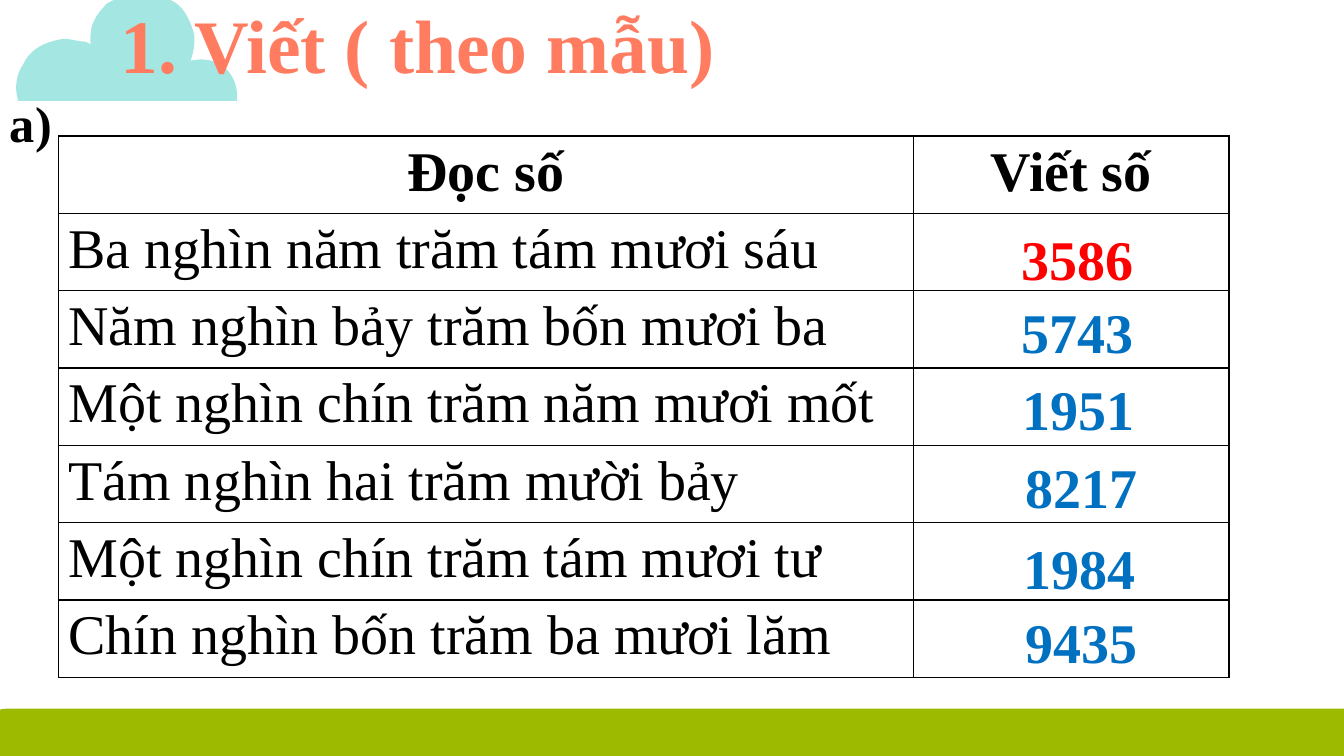
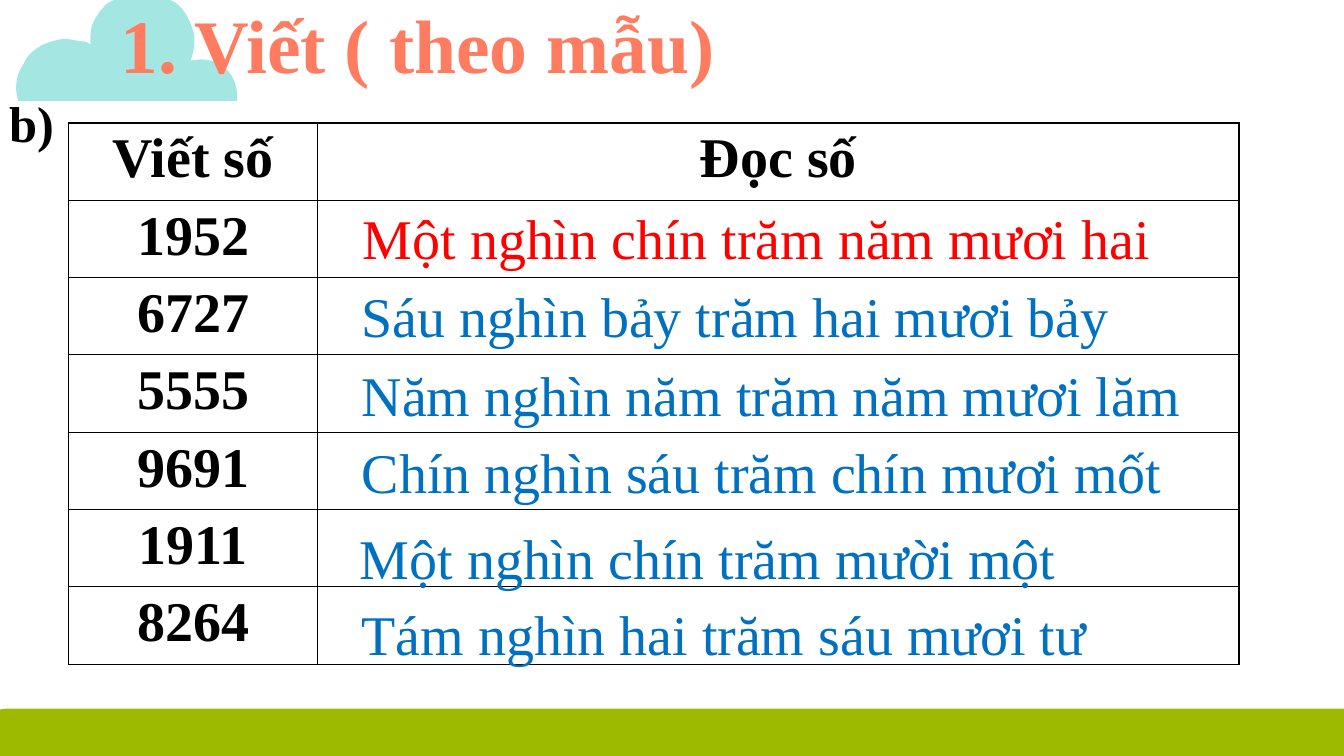
from dataclasses import dataclass

from lxml.etree import SubElement
from pptx import Presentation
from pptx.dml.color import RGBColor
from pptx.enum.shapes import MSO_SHAPE
from pptx.enum.text import MSO_ANCHOR, MSO_AUTO_SIZE, PP_ALIGN
from pptx.oxml.ns import qn
from pptx.util import Inches, Pt

FONT = "Times New Roman"
BLACK, RED, BLUE = "000000", "FF0000", "0070C0"
CORAL, AQUA, GREEN = "FF7C61", "A4E7E2", "9DB900"
BODY_SIZE = 40
TABLE_COLUMNS, TABLE_ROWS = 11.61, 5.37
ANSWER_ROWS = 0.77

CLOUD_GRID = (221, 111)
CLOUD_START = (2, 110)
CLOUD_CURVES = [
    ((1, 106), (0, 101), (0, 98)),
    ((0, 89), (2, 81), (7, 74)),
    ((12, 62), (24, 54), (36, 51)),
    ((49, 47), (51, 49), (64, 51)),
    ((68, 51), (71, 52), (74, 54)),
    ((73, 49), (74, 42), (75, 36)),
    ((78, 28), (82, 22), (87, 17)),
    ((89, 13), (93, 12), (97, 10)),
    ((104, 3), (114, 0), (124, 0)),
    ((134, 0), (144, 3), (153, 10)),
    ((165, 15), (171, 27), (175, 39)),
    ((178, 46), (177, 56), (175, 64)),
    ((175, 66), (173, 69), (173, 70)),
    ((176, 70), (180, 69), (183, 69)),
    ((209, 69), (221, 90), (219, 110)),
]


@dataclass
class Box:
    """A region measured in the one-inch columns and rows of the slide grid."""

    column: float
    row: float
    columns: float
    rows: float

    def lengths(self):
        """Return left, top, width and height."""
        return [Inches(value) for value in (self.column, self.row, self.columns, self.rows)]


@dataclass
class Answer:
    """An answer with its offset from the corner of its table cell."""

    text: str
    across: float
    down: float


CLOUD_BOX = Box(0.16, -0.1, 2.21, 1.11)
BAND_BOX = Box(-0.14, 7.03, 13.73, 0.49)
TITLE_BOX = Box(-1.94, -0.07, 12.35, 1.01)
LETTER_BOX = Box(0, 0.86, 0.68, 0.71)


def color(value):
    """Turn a hex string into a colour."""
    return RGBColor.from_string(value)


def paint(shape, fill):
    """Give a shape a flat fill without line or shadow."""
    shape.shadow.inherit = False
    shape.fill.solid()
    shape.fill.fore_color.rgb = color(fill)
    shape.line.fill.background()


def write(frame, text, size, ink, bold=False, align=PP_ALIGN.LEFT):
    """Write one formatted run in the first paragraph of a frame."""
    paragraph = frame.paragraphs[0]
    paragraph.alignment = align
    run = paragraph.add_run()
    run.text = text
    run.font.name = FONT
    run.font.size = Pt(size)
    run.font.bold = bold
    run.font.color.rgb = color(ink)


def add_label(slide, box, text, size, ink, bold):
    """Add a wrapped text box with one line of text."""
    frame = slide.shapes.add_textbox(*box.lengths()).text_frame
    frame.word_wrap = True
    write(frame, text, size, ink, bold)


def bend(shape, curves):
    """Turn the straight segments of a freeform into cubic curves."""
    segments = list(shape.element.iter(qn("a:lnTo")))
    for segment, points in zip(segments, curves):
        curve = segment.makeelement(qn("a:cubicBezTo"))
        for x, y in points:
            SubElement(curve, qn("a:pt"), x=str(x), y=str(y))
        segment.getparent().replace(segment, curve)


def add_cloud(slide, box):
    """Draw the cloud scaled to its box."""
    left, top, width, height = box.lengths()
    scale = (width / CLOUD_GRID[0], height / CLOUD_GRID[1])
    builder = slide.shapes.build_freeform(*CLOUD_START, scale=scale)
    builder.add_line_segments([curve[-1] for curve in CLOUD_CURVES], close=True)
    cloud = builder.convert_to_shape(left, top)
    bend(cloud, CLOUD_CURVES)
    paint(cloud, AQUA)
    return cloud


def add_band(slide, box):
    """Draw the rounded band along the bottom edge."""
    band = slide.shapes.add_shape(MSO_SHAPE.ROUNDED_RECTANGLE, *box.lengths())
    band.adjustments[0] = 0.42
    paint(band, GREEN)
    return band


def add_title(slide, box):
    """Place and format the title placeholder."""
    title = slide.shapes.title
    title.left, title.top, title.width, title.height = box.lengths()
    frame = title.text_frame
    frame.word_wrap = True
    frame.auto_size = MSO_AUTO_SIZE.NONE
    frame.vertical_anchor = MSO_ANCHOR.TOP
    write(frame, "1. Viết ( theo mẫu) ", 54, CORAL, True, PP_ALIGN.CENTER)
    return title


def outline_cell(cell):
    """Clear the fill of a cell and draw its four borders."""
    properties = cell._tc.get_or_add_tcPr()
    for side in ("lnL", "lnR", "lnT", "lnB"):
        line = SubElement(properties, qn(f"a:{side}"), w=str(Pt(1)))
        fill = SubElement(line, qn("a:solidFill"))
        SubElement(fill, qn("a:srgbClr"), val=BLACK)
    cell.fill.background()


def add_number_table(slide, box, widths, headings, prompts, prompt_bold, prompt_align):
    """Add a table with headings, prompts and an empty answer column."""
    row_count = len(prompts) + 1
    table = slide.shapes.add_table(row_count, len(widths), *box.lengths()).table
    table.first_row = table.horz_banding = False
    for column, width in zip(table.columns, widths):
        column.width = Inches(width)
    for row in table.rows:
        row.height = Inches(box.rows / row_count)
    for cell in table.iter_cells():
        outline_cell(cell)
    for index, heading in enumerate(headings):
        write(table.cell(0, index).text_frame, heading, BODY_SIZE, BLACK, True, PP_ALIGN.CENTER)
    for index, prompt in enumerate(prompts, 1):
        write(table.cell(index, 0).text_frame, prompt, BODY_SIZE, BLACK, prompt_bold, prompt_align)


def add_answers(slide, box, first_width, answers, width, bold):
    """Lay the answers over the second column, the worked example in red."""
    pitch = box.rows / (len(answers) + 1)
    for index, answer in enumerate(answers, 1):
        place = Box(box.column + first_width + answer.across,
                    box.row + index * pitch + answer.down, width, ANSWER_ROWS)
        add_label(slide, place, answer.text, BODY_SIZE, RED if index == 1 else BLUE, bold)


def add_exercise(presentation, letter, box, widths, headings, prompts, answers,
                 answer_width, numbers_first):
    """Build one exercise slide."""
    slide = presentation.slides.add_slide(presentation.slide_layouts[5])
    title = add_title(slide, TITLE_BOX)
    for shape in (add_cloud(slide, CLOUD_BOX), add_band(slide, BAND_BOX)):
        title.element.addprevious(shape.element)
    align = PP_ALIGN.CENTER if numbers_first else PP_ALIGN.LEFT
    add_number_table(slide, box, widths, headings, prompts, numbers_first, align)
    add_answers(slide, box, widths[0], answers, answer_width, not numbers_first)
    add_label(slide, LETTER_BOX, letter, 36, BLACK, True)


def main():
    """Build both exercise slides and save them."""
    presentation = Presentation()
    presentation.slide_width, presentation.slide_height = Inches(13.33), Inches(7.5)
    add_exercise(
        presentation, "a)", Box(0.58, 1.35, TABLE_COLUMNS, TABLE_ROWS), (8.48, 3.13),
        ("Đọc số", "Viết số"),
        ("Ba nghìn năm trăm tám mươi sáu", "Năm nghìn bảy trăm bốn mươi ba",
         "Một nghìn chín trăm năm mươi mốt", "Tám nghìn hai trăm mười bảy",
         "Một nghìn chín trăm tám mươi tư", "Chín nghìn bốn trăm ba mươi lăm"),
        (Answer("3586", 0.97, 0.06), Answer("5743", 0.97, 0.02),
         Answer("1951", 0.98, 0.02), Answer("8217", 1.01, 0.02),
         Answer("1984", 0.99, 0.06), Answer("9435", 1.01, 0.03)),
        1.83, numbers_first=False,
    )
    add_exercise(
        presentation, "b)", Box(0.68, 1.22, TABLE_COLUMNS, TABLE_ROWS), (2.47, 9.14),
        ("Viết số", "Đọc số"),
        ("1952", "6727", "5555", "9691", "1911", "8264"),
        (Answer("Một nghìn chín trăm năm mươi hai", 0.35, -0.02),
         Answer("Sáu nghìn bảy trăm hai mươi bảy", 0.34, -0.01),
         Answer("Năm nghìn năm trăm năm mươi lăm", 0.34, 0.01),
         Answer("Chín nghìn sáu trăm chín mươi mốt", 0.34, 0),
         Answer("Một nghìn chín trăm mười một", 0.32, 0.09),
         Answer("Tám nghìn hai trăm sáu mươi tư", 0.34, 0.08)),
        8.46, numbers_first=True,
    )
    presentation.save("out.pptx")


if __name__ == "__main__":
    main()
